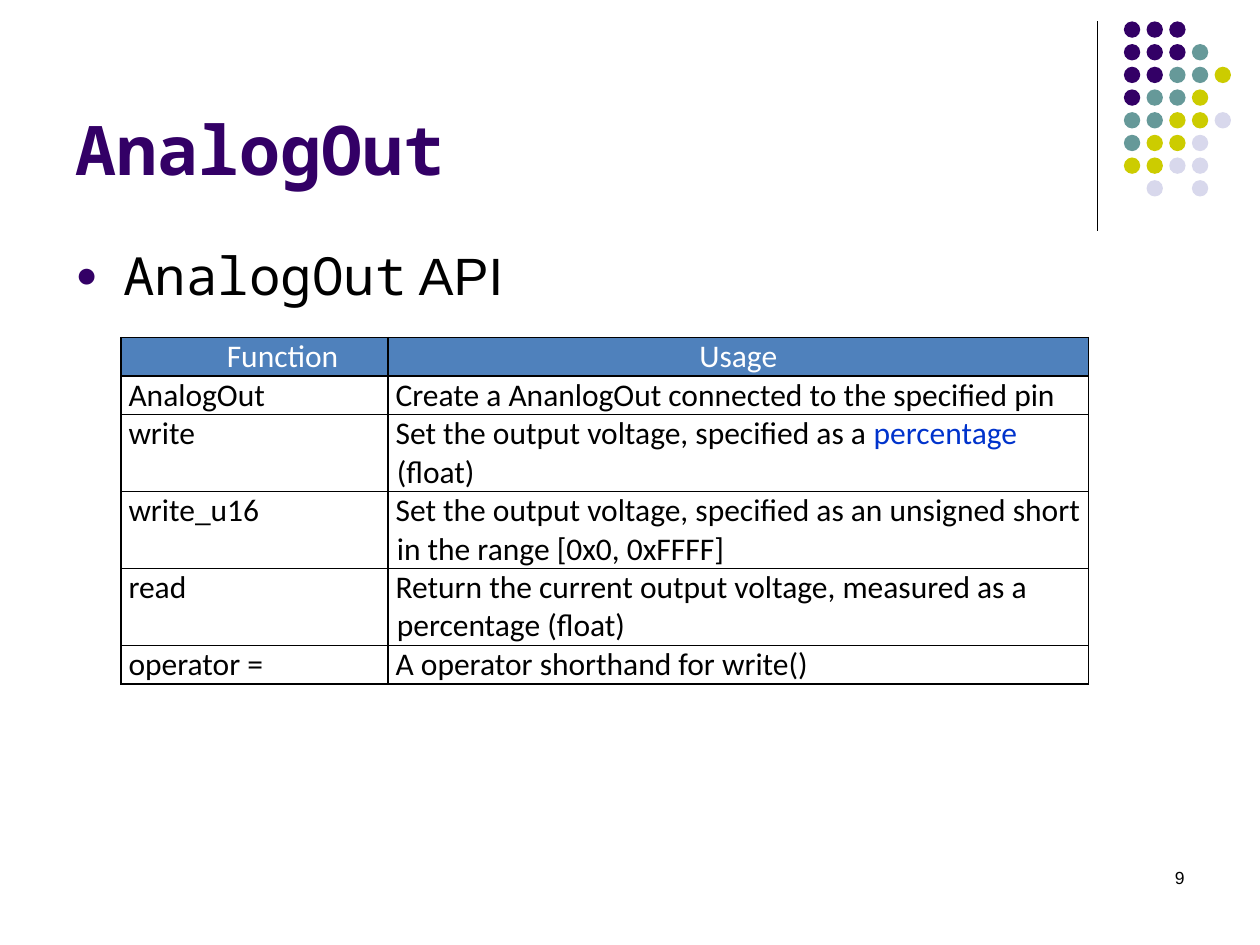
from dataclasses import dataclass

from lxml import etree
from pptx import Presentation
from pptx.dml.color import RGBColor
from pptx.enum.shapes import MSO_CONNECTOR, MSO_SHAPE
from pptx.enum.text import MSO_ANCHOR, MSO_AUTO_SIZE, PP_ALIGN
from pptx.oxml.ns import qn
from pptx.util import Inches, Pt

LINE = MSO_CONNECTOR.STRAIGHT
OVAL = MSO_SHAPE.OVAL
LEFT, MID, RIGHT = PP_ALIGN.LEFT, PP_ALIGN.CENTER, PP_ALIGN.RIGHT
TOP, BASE = MSO_ANCHOR.TOP, MSO_ANCHOR.BOTTOM
FIXED = MSO_AUTO_SIZE.NONE


@dataclass(frozen=True)
class Theme:
    dark: str = "330066"
    teal: str = "669999"
    lime: str = "CCCC00"
    pale: str = "D8D8EC"
    black: str = "000000"
    white: str = "FFFFFF"
    head: str = "4F81BC"
    blue: str = "0033CC"
    sans: str = "Arial"
    mono: str = "Noto Sans Mono"
    cell: str = "Calibri"
    title: int = 39
    body: int = 30
    table: int = 18
    small: int = 10


def place(item, box):
    for name, size in zip(("left", "top", "width", "height"), box):
        setattr(item, name, Inches(size))


def apply(item, values):
    for name, value in values.items():
        setattr(item, name, value)


def indent(para, left, first):
    props = para._p.get_or_add_pPr()
    props.set("marL", str(Inches(left)))
    props.set("indent", str(Inches(first)))
    return props


class Deck:
    def __init__(self, theme):
        self.theme = theme
        self.file = Presentation()
        apply(self.file, {"slide_width": Inches(10), "slide_height": Inches(7.5)})
        self.slide = self.file.slides.add_slide(self.file.slide_layouts[1])
        self.shapes = self.slide.shapes

    def words(self, para, runs, size, align=LEFT):
        para.alignment = align
        for text, face, color, bold in runs:
            run = para.add_run()
            run.text = text
            apply(run.font, {"name": face, "size": Pt(size), "bold": bold})
            run.font.color.rgb = RGBColor.from_string(color)

    def frame(self, item, anchor):
        apply(item.text_frame, {
            "word_wrap": True, "auto_size": FIXED, "vertical_anchor": anchor,
        })
        return item.text_frame.paragraphs[0]

    def title(self, text, box):
        item = self.shapes.title
        place(item, box)
        para = self.frame(item, BASE)
        look = self.theme
        self.words(para, [(text, look.mono, look.dark, True)], look.title)

    def body(self, parts, box):
        item = self.slide.placeholders[1]
        place(item, box)
        para = self.frame(item, TOP)
        look = self.theme
        runs = [(text, face, look.black, False) for text, face in parts]
        self.words(para, runs, look.body)
        props = indent(para, 0.38, -0.38)
        color = etree.SubElement(props, qn("a:buClr"))
        etree.SubElement(color, qn("a:srgbClr"), val=look.dark)
        etree.SubElement(props, qn("a:buSzPct"), val="70000")
        etree.SubElement(props, qn("a:buFont"), typeface=look.sans)
        etree.SubElement(props, qn("a:buChar"), char="●")

    def label(self, text, box):
        item = self.shapes.add_textbox(*map(Inches, box))
        look = self.theme
        runs = [(text, look.sans, look.black, False)]
        self.words(self.frame(item, TOP), runs, look.small, RIGHT)

    def rule(self, *ends):
        line = self.shapes.add_connector(LINE, *map(Inches, ends))
        line.line.color.rgb = RGBColor.from_string(self.theme.black)
        line.line.width = Pt(0.75)
        etree.SubElement(line._element.spPr, qn("a:effectLst"))

    def dots(self, rows, left, top, step, size):
        look = self.theme
        colors = {"D": look.dark, "T": look.teal, "L": look.lime, "P": look.pale}
        group = self.shapes.add_group_shape()
        for r, row in enumerate(rows):
            for c, key in enumerate(row):
                if key not in colors:
                    continue
                box = (left + c * step, top + r * step, size, size)
                dot = group.shapes.add_shape(OVAL, *map(Inches, box))
                dot.shadow.inherit = False
                dot.fill.solid()
                dot.fill.fore_color.rgb = RGBColor.from_string(colors[key])
                dot.line.fill.background()

    def border(self, cell):
        props = cell._tc.get_or_add_tcPr()
        for spot, side in enumerate(("lnL", "lnR", "lnT", "lnB")):
            edge = etree.Element(qn(f"a:{side}"), w=str(Pt(1)))
            fill = etree.SubElement(edge, qn("a:solidFill"))
            etree.SubElement(fill, qn("a:srgbClr"), val=self.theme.black)
            props.insert(spot, edge)

    def fill(self, cell, parts, head, first):
        look = self.theme
        apply(cell, dict.fromkeys(
            ("margin_left", "margin_top", "margin_right", "margin_bottom"), 0))
        if head:
            cell.fill.solid()
            cell.fill.fore_color.rgb = RGBColor.from_string(look.head)
        else:
            cell.fill.background()
        self.border(cell)
        para = cell.text_frame.paragraphs[0]
        base = look.white if head else look.black
        runs = [(text, look.cell, color or base, False) for text, color in parts]
        self.words(para, runs, look.table, MID if head and not first else LEFT)
        if first or not head:
            indent(para, 0.85 if head else 0.07, -0.01)

    def table(self, rows, box, widths, unit):
        item = self.shapes.add_table(len(rows), len(widths), *map(Inches, box))
        grid = item.table
        for col, width in zip(grid.columns, widths):
            col.width = Inches(width)
        for r, (name, usage, lines) in enumerate(rows):
            grid.rows[r].height = Inches(unit * lines)
            self.fill(grid.cell(r, 0), [(name, None)], r == 0, True)
            self.fill(grid.cell(r, 1), usage, r == 0, False)


def main():
    look = Theme()
    deck = Deck(look)
    deck.rule(8.71, 0.17, 8.71, 1.83)
    pattern = ("DDD", "DDDT", "DDTTL", "DTTL", "TTLLP", "TLLP", "LLPP", " P P")
    deck.dots(pattern, 8.92, 0.17, 0.18, 0.13)
    deck.title("AnalogOut", (0.5, 0.13, 8.25, 1.42))
    deck.body([("AnalogOut", look.mono), (" API", look.sans)], (0.5, 1.88, 9, 4.82))
    rows = [
        ("Function", [("Usage", None)], 1),
        ("AnalogOut",
         [("Create a AnanlogOut connected to the specified pin", None)], 1),
        ("write", [("Set the output voltage, specified as a ", None),
                   ("percentage", look.blue), (" (float)", None)], 2),
        ("write_u16", [("Set the output voltage, specified as an unsigned short "
                        "in the range [0x0, 0xFFFF]", None)], 2),
        ("read", [("Return the current output voltage, measured as a "
                   "percentage (float)", None)], 2),
        ("operator =", [("A operator shorthand for write()", None)], 1),
    ]
    deck.table(rows, (0.96, 2.68, 7.68, 2.7), (2.12, 5.56), 0.3)
    deck.label("9", (7.17, 6.83, 2.33, 0.5))
    deck.file.save("out.pptx")


if __name__ == "__main__":
    main()
